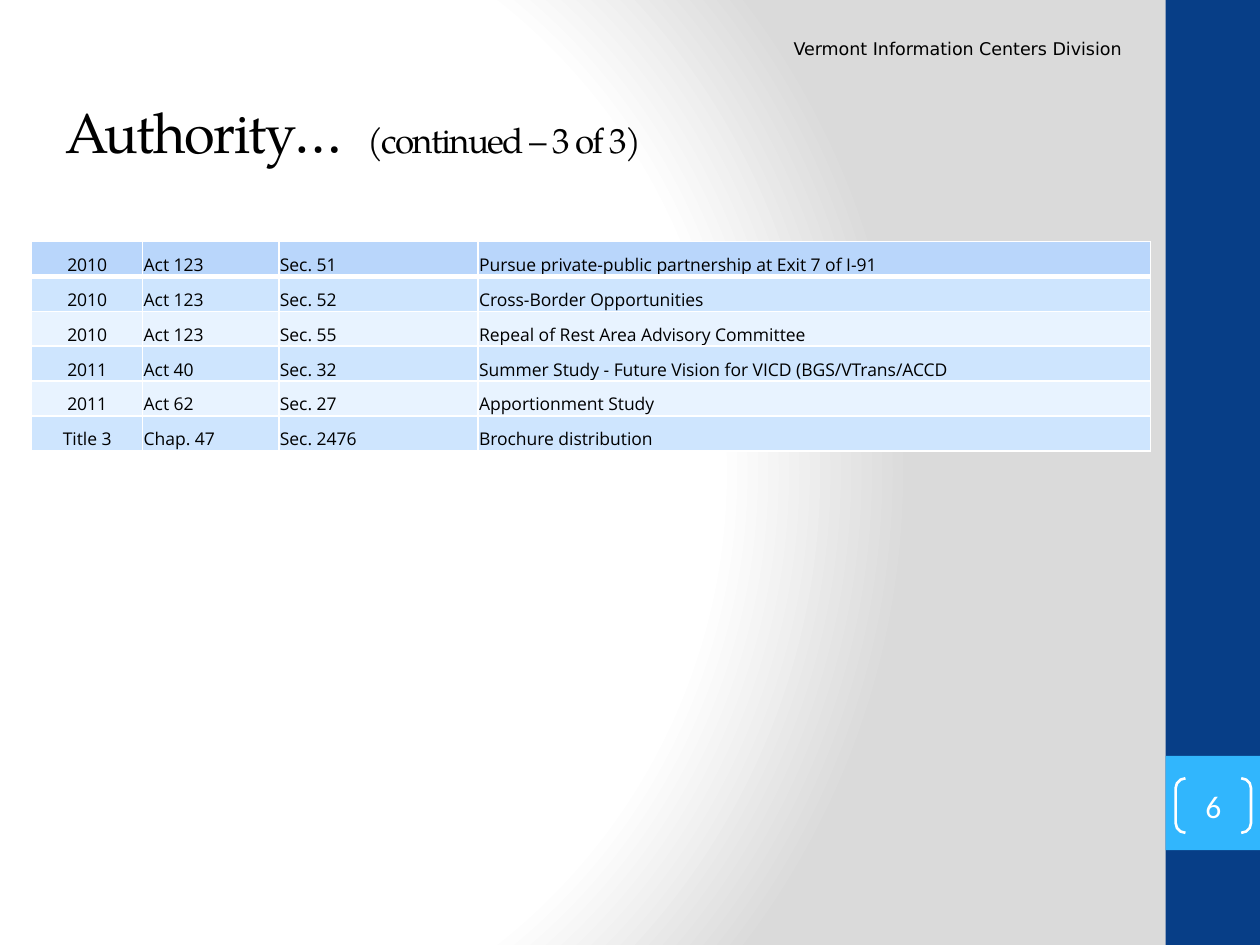
import dataclasses

import pptx
import pptx.dml.color
import pptx.enum.shapes
import pptx.enum.text
import pptx.oxml
import pptx.oxml.ns
import pptx.util

Cm = pptx.util.Cm
Pt = pptx.util.Pt
Align = pptx.enum.text.PP_ALIGN
Anchor = pptx.enum.text.MSO_ANCHOR
Preset = pptx.enum.shapes.MSO_SHAPE


@dataclasses.dataclass(frozen=True)
class Theme:
    band: str = "073E87"
    accent: str = "31B6FD"
    white: str = "FFFFFF"
    shade: str = "DADADA"
    ink: str = "000000"
    header_row: str = "B9D6FB"
    odd_row: str = "CEE5FE"
    even_row: str = "E8F3FF"
    title_font: str = "TeX Gyre Pagella"
    table_font: str = "Open Sans"
    label_font: str = "DejaVu Sans"
    number_font: str = "Calibri"
    title_size: int = 32
    subtitle_size: int = 20
    body_size: int = 10
    number_size: int = 18


THEME = Theme()

AUTHORITIES = [
    ("2010", "Act 123", "Sec. 51", "Pursue private-public partnership at Exit 7 of I-91"),
    ("2010", "Act 123", "Sec. 52", "Cross-Border Opportunities"),
    ("2010", "Act 123", "Sec. 55", "Repeal of Rest Area Advisory Committee"),
    ("2011", "Act 40", "Sec. 32", "Summer Study - Future Vision for VICD (BGS/VTrans/ACCD"),
    ("2011", "Act 62", "Sec. 27", "Apportionment Study"),
    ("Title 3", "Chap. 47", "Sec. 2476", "Brochure distribution"),
]


def rgb(color):
    return pptx.dml.color.RGBColor.from_string(color)


def add_run(paragraph, text, font, size, color=THEME.ink, tracking=0):
    run = paragraph.add_run()
    run.text = text
    run.font.name = font
    run.font.size = Pt(size)
    run.font.color.rgb = rgb(color)
    if tracking:
        run.font._element.set("spc", str(tracking * 100))


def set_insets(target, left, top, right, bottom):
    target.margin_left, target.margin_top = left, top
    target.margin_right, target.margin_bottom = right, bottom


def paint_background(slide):
    slide.background.fill.solid()
    properties = slide.element.xpath("p:cSld/p:bg/p:bgPr")[0]
    stops = "".join(
        f'<a:gs pos="{position * 1000}"><a:srgbClr val="{color}"/></a:gs>'
        for position, color in [(0, THEME.white), (75, THEME.white), (100, THEME.shade)]
    )
    gradient = pptx.oxml.parse_xml(
        f'<a:gradFill {pptx.oxml.ns.nsdecls("a")} rotWithShape="1"><a:gsLst>{stops}</a:gsLst>'
        '<a:path path="circle"><a:fillToRect l="20000" t="50000" r="100000" b="50000"/>'
        "</a:path></a:gradFill>"
    )
    properties.replace(properties[0], gradient)


def add_block(slide, left, top, width, height, color):
    block = slide.shapes.add_shape(Preset.RECTANGLE, left, top, width, height)
    block.shadow.inherit = False
    block.fill.solid()
    block.fill.fore_color.rgb = rgb(color)
    block.line.fill.background()


def add_side_band(slide, left, top, width, height, number):
    add_block(slide, left, top, width, height, THEME.band)
    square_top = top + int(height * 0.8)
    add_block(slide, left, square_top, width, width, THEME.accent)
    bracket = slide.shapes.add_shape(
        Preset.DOUBLE_BRACKET, left + Cm(0.2), square_top + Cm(0.45), Cm(1.52), Cm(1.1)
    )
    bracket.adjustments[0] = 0.18
    bracket.shadow.inherit = False
    bracket.fill.background()
    bracket.line.color.rgb = rgb(THEME.white)
    bracket.line.width = Pt(1.5)
    frame = bracket.text_frame
    set_insets(frame, 0, 0, 0, 0)
    frame.vertical_anchor = Anchor.MIDDLE
    paragraph = frame.paragraphs[0]
    paragraph.alignment = Align.CENTER
    add_run(paragraph, number, THEME.number_font, THEME.number_size, THEME.white)


def place_title(slide, left, top, width, height, heading, detail):
    title = slide.shapes.title
    title.left, title.top, title.width, title.height = left, top, width, height
    frame = title.text_frame
    frame.auto_size = pptx.enum.text.MSO_AUTO_SIZE.NONE
    frame.vertical_anchor = Anchor.MIDDLE
    paragraph = frame.paragraphs[0]
    paragraph.alignment = Align.LEFT
    add_run(paragraph, heading, THEME.title_font, THEME.title_size, tracking=-1)
    add_run(paragraph, " ", THEME.title_font, THEME.title_size, tracking=6)
    add_run(paragraph, detail, THEME.title_font, THEME.subtitle_size, tracking=-1)


def add_division_label(slide, left, top, width, height, text):
    frame = slide.shapes.add_textbox(left, top, width, height).text_frame
    frame.word_wrap = True
    paragraph = frame.paragraphs[0]
    paragraph.alignment = Align.RIGHT
    add_run(paragraph, text, THEME.label_font, THEME.body_size)


def set_borders(cell, top, bottom):
    properties = cell._tc.get_or_add_tcPr()
    widths = {"lnL": 1, "lnR": 1, "lnT": top, "lnB": bottom}
    for index, (side, width) in enumerate(widths.items()):
        border = pptx.oxml.parse_xml(
            f'<a:{side} {pptx.oxml.ns.nsdecls("a")} w="{Pt(width)}"><a:solidFill>'
            f'<a:srgbClr val="{THEME.white}"/></a:solidFill></a:{side}>'
        )
        properties.insert(index, border)


def row_color(row):
    if row == 0:
        return THEME.header_row
    return THEME.odd_row if row % 2 else THEME.even_row


def add_authority_table(slide, left, top, width, height, rows):
    shares = (0.88, 1.08, 1.58, 5.33)
    table = slide.shapes.add_table(len(rows), len(shares), left, top, width, height).table
    for column, share in zip(table.columns, shares):
        column.width = int(width * share / sum(shares))
    for row, texts in enumerate(rows):
        table.rows[row].height = height // len(rows)
        for column, text in enumerate(texts):
            cell = table.cell(row, column)
            cell.fill.solid()
            cell.fill.fore_color.rgb = rgb(row_color(row))
            set_borders(cell, top=3 if row == 1 else 1, bottom=3 if row == 0 else 1)
            set_insets(cell, Cm(0.02), Cm(0.02), Cm(0.02), 0)
            cell.vertical_anchor = Anchor.BOTTOM
            paragraph = cell.text_frame.paragraphs[0]
            paragraph.alignment = Align.LEFT if column else Align.CENTER
            add_run(paragraph, text, THEME.table_font, THEME.body_size)


def main():
    presentation = pptx.Presentation()
    presentation.slide_width, presentation.slide_height = Cm(25.4), Cm(19.05)
    slide = presentation.slides.add_slide(presentation.slide_layouts[5])
    paint_background(slide)
    add_side_band(slide, Cm(23.5), 0, Cm(1.9), Cm(19.05), "6")
    place_title(
        slide, Cm(1.06), Cm(1.9), Cm(21.17), Cm(1.48), "Authority…", "(continued – 3 of 3)"
    )
    add_authority_table(slide, Cm(0.64), Cm(4.87), Cm(22.55), Cm(4.22), AUTHORITIES)
    add_division_label(
        slide, Cm(14.6), Cm(0.64), Cm(8.26), Cm(0.68), "Vermont Information Centers Division"
    )
    presentation.save("out.pptx")


if __name__ == "__main__":
    main()
